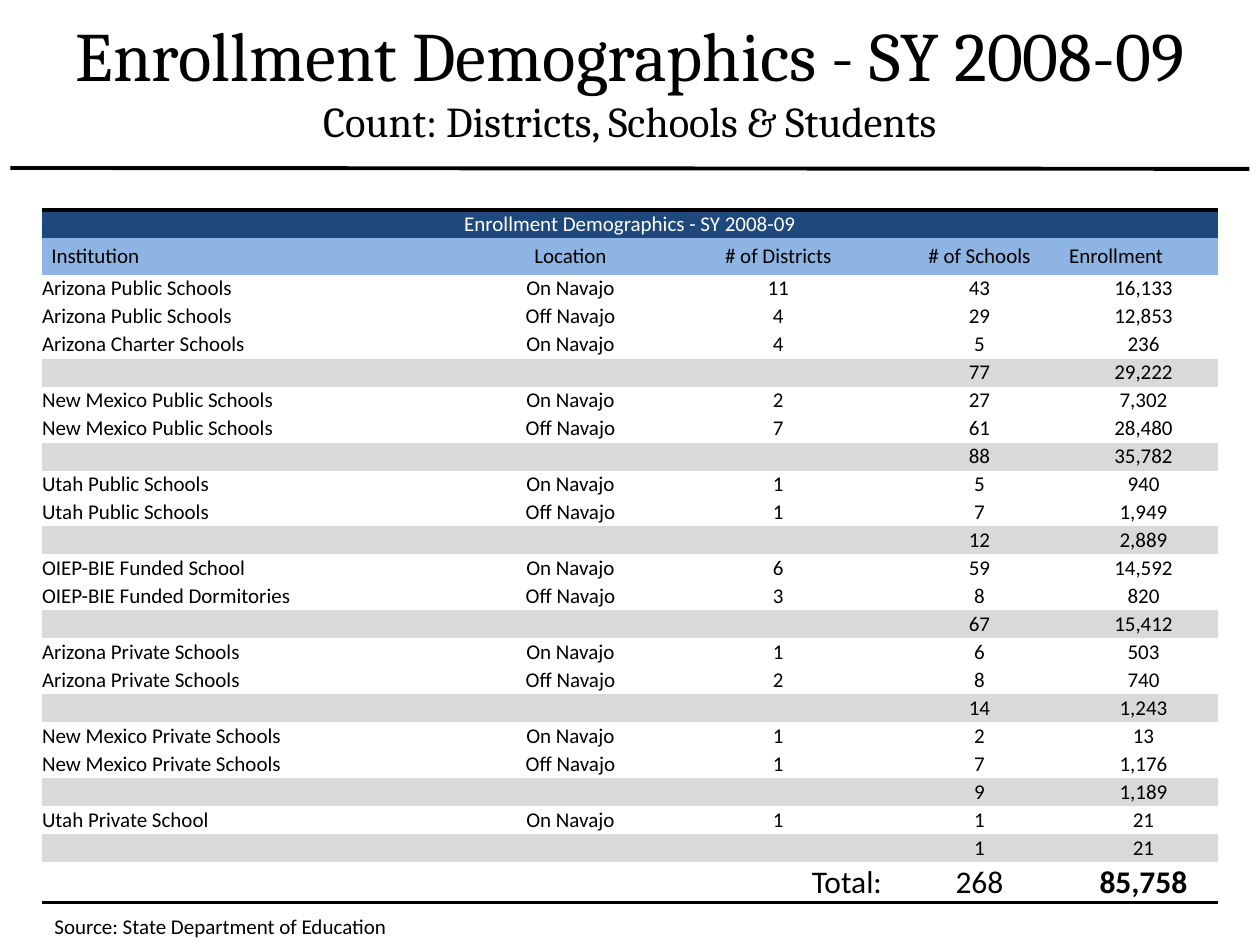
from lxml import etree
from pptx import Presentation
from pptx.dml.color import RGBColor
from pptx.enum import shapes, text
from pptx.oxml.ns import qn
from pptx.util import Pt

BLACK, WHITE, NAVY, BLUE, GREY = "000000", "FFFFFF", "1F497D", "8EB4E3", "D9D9D9"
LEFT, CENTER, RIGHT = text.PP_ALIGN.LEFT, text.PP_ALIGN.CENTER, text.PP_ALIGN.RIGHT
NO_STYLE = "{2D5ABB26-0587-4C30-8999-92F81FD0307C}"

COLUMN_WIDTHS = [247, 110, 127.5, 102.5, 85]
COLUMN_ALIGNMENTS = [LEFT, CENTER, CENTER, CENTER, CENTER]
ROW_HEIGHT, HEADER_HEIGHT, TOTAL_HEIGHT = 16, 21, 23
HEADERS = ["Institution", "Location", "# of Districts", "# of Schools", "Enrollment"]

# Each group: institution, location, districts, schools, enrollment
GROUPS = [
    [("Arizona Public Schools", "On Navajo", 11, 43, 16133),
     ("Arizona Public Schools", "Off Navajo", 4, 29, 12853),
     ("Arizona Charter Schools", "On Navajo", 4, 5, 236)],
    [("New Mexico Public Schools", "On Navajo", 2, 27, 7302),
     ("New Mexico Public Schools", "Off Navajo", 7, 61, 28480)],
    [("Utah Public Schools", "On Navajo", 1, 5, 940),
     ("Utah Public Schools", "Off Navajo", 1, 7, 1949)],
    [("OIEP-BIE Funded School", "On Navajo", 6, 59, 14592),
     ("OIEP-BIE Funded Dormitories", "Off Navajo", 3, 8, 820)],
    [("Arizona Private Schools", "On Navajo", 1, 6, 503),
     ("Arizona Private Schools", "Off Navajo", 2, 8, 740)],
    [("New Mexico Private Schools", "On Navajo", 1, 2, 13),
     ("New Mexico Private Schools", "Off Navajo", 1, 7, 1176)],
    [("Utah Private School", "On Navajo", 1, 1, 21)],
]


def rgb(value):
    return RGBColor.from_string(value)


def format_run(run, size, font="Calibri", color=BLACK, bold=False):
    run.font.size = Pt(size)
    run.font.name = font
    run.font.color.rgb = rgb(color)
    run.font.bold = bold


def fill_cell(cell, value, fill, align, size=12, color=BLACK, bold=False):
    cell.fill.solid()
    cell.fill.fore_color.rgb = rgb(fill)
    cell.margin_left = cell.margin_right = cell.margin_top = cell.margin_bottom = 0
    cell.vertical_anchor = text.MSO_ANCHOR.MIDDLE
    paragraph = cell.text_frame.paragraphs[0]
    paragraph.alignment = align
    if value == "":
        # Keeps an empty cell from stretching its row
        etree.SubElement(paragraph._p, qn("a:endParaRPr"), sz=str(size * 100))
        return
    paragraph.text = f"{value:,}" if isinstance(value, int) else value
    format_run(paragraph.runs[0], size, color=color, bold=bold)


def add_border(cell, side, width):
    """Draw a black border; side is a:lnT or a:lnB."""
    line = etree.Element(qn(side), w=str(Pt(width)))
    fill = etree.SubElement(line, qn("a:solidFill"))
    etree.SubElement(fill, qn("a:srgbClr"), val=BLACK)
    cell._tc.get_or_add_tcPr().insert(0, line)


def group_totals(rows):
    return [sum(row[column] for row in rows) for column in (3, 4)]


def body_rows():
    """Yield each row's values and fill, with a grey subtotal after each group."""
    for group in GROUPS:
        for row in group:
            yield row, WHITE
        yield ["", "", "", *group_totals(group)], GREY


def add_title(slide, left, top, width, height):
    frame = slide.shapes.add_textbox(Pt(left), Pt(top), Pt(width), Pt(height)).text_frame
    frame.word_wrap = True
    frame.vertical_anchor = text.MSO_ANCHOR.MIDDLE
    paragraph = frame.paragraphs[0]
    paragraph.text = "Enrollment Demographics - SY 2008-09\vCount: Districts, Schools & Students"
    paragraph.alignment = CENTER
    for run, size in zip(paragraph.runs, (39.6, 24.3)):
        format_run(run, size, "Cambria")


def add_rule(slide, left, top, right, bottom):
    rule = slide.shapes.add_connector(
        shapes.MSO_CONNECTOR.STRAIGHT, Pt(left), Pt(top), Pt(right), Pt(bottom))
    rule.line.color.rgb = rgb(BLACK)
    rule.line.width = Pt(2.25)
    etree.SubElement(rule._element.spPr, qn("a:effectLst"))


def add_enrollment_table(slide, left, top, width, height):
    body = list(body_rows())
    table = slide.shapes.add_table(
        len(body) + 3, len(HEADERS), Pt(left), Pt(top), Pt(width), Pt(height)).table
    table.first_row = table.horz_banding = False
    table._tbl.tblPr.find(qn("a:tableStyleId")).text = NO_STYLE
    for column, column_width in zip(table.columns, COLUMN_WIDTHS):
        column.width = Pt(column_width)
    heights = [ROW_HEIGHT, HEADER_HEIGHT] + [ROW_HEIGHT] * len(body) + [TOTAL_HEIGHT]
    for row, row_height in zip(table.rows, heights):
        row.height = Pt(row_height)

    caption = ["Enrollment Demographics - SY 2008-09", "", "", "", ""]
    for cell, value in zip(table.rows[0].cells, caption):
        fill_cell(cell, value, NAVY, CENTER, color=WHITE)
        add_border(cell, "a:lnT", 2)
    table.cell(0, 0).merge(table.cell(0, len(HEADERS) - 1))

    header_alignments = COLUMN_ALIGNMENTS[:-1] + [LEFT]
    for cell, value, align in zip(table.rows[1].cells, HEADERS, header_alignments):
        fill_cell(cell, value, BLUE, align)
    table.cell(1, 0).margin_left = Pt(5.4)

    for index, (values, fill) in enumerate(body, start=2):
        for cell, value, align in zip(table.rows[index].cells, values, COLUMN_ALIGNMENTS):
            fill_cell(cell, value, fill, align)

    last = len(body) + 2
    totals = ["", "", "Total:", *group_totals([row for group in GROUPS for row in group])]
    alignments = [LEFT, CENTER, RIGHT, CENTER, CENTER]
    for column, (value, align) in enumerate(zip(totals, alignments)):
        cell = table.cell(last, column)
        fill_cell(cell, value, WHITE, align, size=18, bold=column == 4)
        add_border(cell, "a:lnB", 2)
    table.cell(last, 2).margin_right = Pt(4.5)


def add_source(slide, left, top, width, height):
    frame = slide.shapes.add_textbox(Pt(left), Pt(top), Pt(width), Pt(height)).text_frame
    frame.word_wrap = False
    frame.auto_size = text.MSO_AUTO_SIZE.SHAPE_TO_FIT_TEXT
    frame.text = "Source: State Department of Education"
    format_run(frame.paragraphs[0].runs[0], 12)


def main():
    presentation = Presentation()
    presentation.slide_width, presentation.slide_height = Pt(720), Pt(540)
    slide = presentation.slides.add_slide(presentation.slide_layouts[6])
    add_title(slide, 0, 0, 720, 90)
    add_enrollment_table(slide, 24, 120, 672, 396)
    add_source(slide, 24, 518.4, 206, 21.6)
    add_rule(slide, 6, 96, 714, 96.5)
    presentation.save("out.pptx")


if __name__ == "__main__":
    main()
